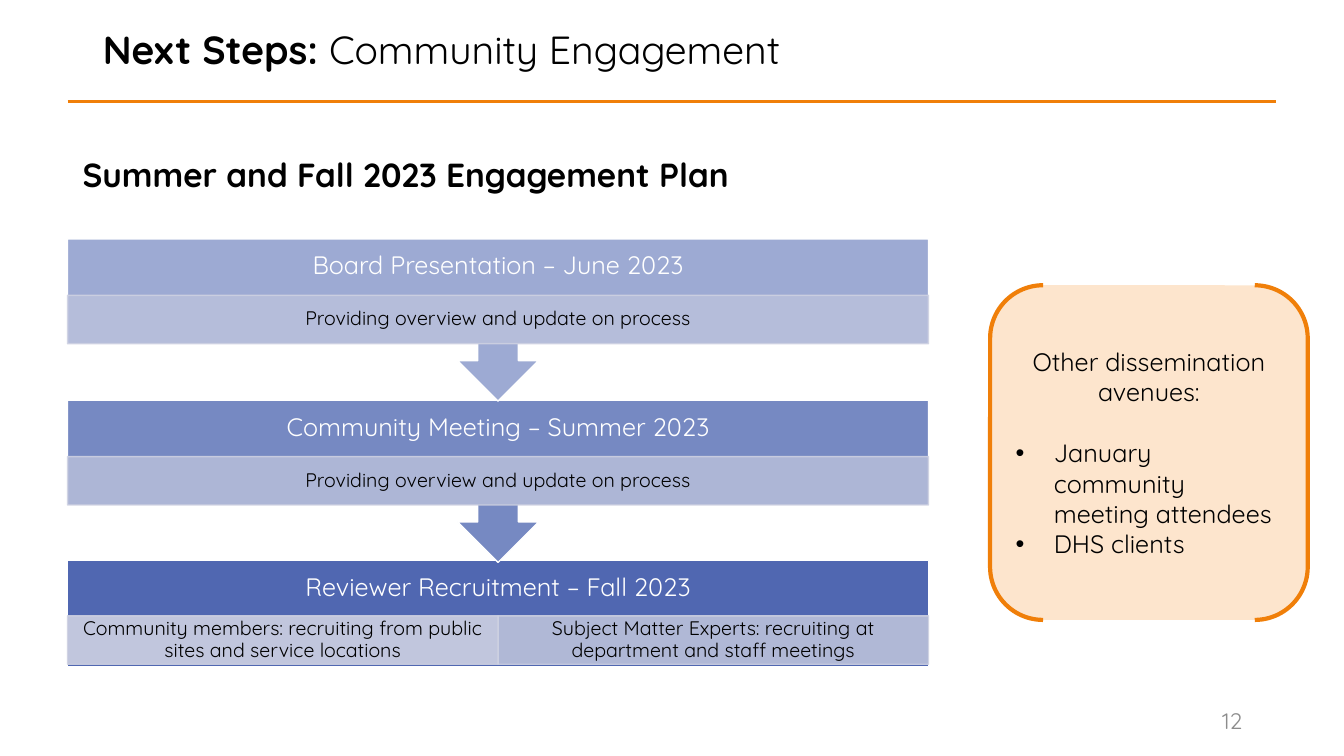
from dataclasses import dataclass

from lxml import etree
from pptx import Presentation
from pptx.dml.color import RGBColor
from pptx.enum.shapes import MSO_CONNECTOR, MSO_SHAPE
from pptx.enum.text import MSO_ANCHOR, PP_ALIGN
from pptx.oxml.ns import qn
from pptx.util import Inches, Pt

LEFT, CENTER, RIGHT = PP_ALIGN.LEFT, PP_ALIGN.CENTER, PP_ALIGN.RIGHT
TOP, MIDDLE = MSO_ANCHOR.TOP, MSO_ANCHOR.MIDDLE
RECTANGLE, CALLOUT = MSO_SHAPE.RECTANGLE, MSO_SHAPE.DOWN_ARROW_CALLOUT
BRACKETS, STRAIGHT = MSO_SHAPE.DOUBLE_BRACKET, MSO_CONNECTOR.STRAIGHT


@dataclass(frozen=True)
class Theme:
    font: str = "Quicksand"
    black: str = "000000"
    white: str = "FFFFFF"
    gray: str = "8C8C8C"
    orange: str = "F07F09"
    peach: str = "FDE5CD"
    blue: str = "3D57A9"
    pale_blue: str = "CED1E2"
    title_size: float = 28
    heading_size: float = 23.8
    body_size: float = 18
    number_size: float = 16
    detail_size: float = 14


theme = Theme()


def add_text(paragraph, text, size=theme.body_size, color=theme.black,
             bold=False, align=LEFT, spacing=1.0):
    paragraph.alignment = align
    paragraph.line_spacing = spacing
    run = paragraph.add_run()
    run.text = text
    run.font.name = theme.font
    run.font.size = Pt(size)
    run.font.bold = bold
    run.font.color.rgb = RGBColor.from_string(color)


def add_block(kind, left, top, width, height, fill, line, line_width=1,
              fill_alpha=100, line_alpha=100, anchor=MIDDLE, margins=(0.1, 0.05)):
    shape = slide.shapes.add_shape(
        kind, Inches(left), Inches(top), Inches(width), Inches(height))
    shape.shadow.inherit = False
    shape.fill.solid()
    shape.fill.fore_color.rgb = RGBColor.from_string(fill)
    shape.line.color.rgb = RGBColor.from_string(line)
    shape.line.width = Pt(line_width)
    # Transparency of the fill and the outline
    properties = shape._element.spPr
    for holder, alpha in ((properties, fill_alpha),
                          (properties.find(qn("a:ln")), line_alpha)):
        color = holder.find(qn("a:solidFill"))[0]
        etree.SubElement(color, qn("a:alpha"), val=str(alpha * 1000))
    frame = shape.text_frame
    frame.word_wrap = True
    frame.vertical_anchor = anchor
    frame.margin_left = frame.margin_right = Inches(margins[0])
    frame.margin_top = frame.margin_bottom = Inches(margins[1])
    return shape


presentation = Presentation()
presentation.slide_width = Inches(13.33)
presentation.slide_height = Inches(7.5)
slide = presentation.slides.add_slide(presentation.slide_layouts[5])

# Title
title = slide.shapes.title
title.left, title.top = Inches(0.92), Inches(0.25)
title.width, title.height = Inches(11.5), Inches(0.92)
title.text_frame.vertical_anchor = TOP
for text, bold in (("Next Steps: ", True), ("Community Engagement", False)):
    add_text(title.text_frame.paragraphs[0], text, size=theme.title_size,
             bold=bold, spacing=0.9)

# Rule under the title
rule = slide.shapes.add_connector(
    STRAIGHT, Inches(0.67), Inches(1.01), Inches(12.66), Inches(1.01))
rule.line.color.rgb = RGBColor.from_string(theme.orange)
rule.line.width = Pt(2.25)
etree.SubElement(rule._element.spPr, qn("a:effectLst"))

# Heading and slide number
labels = (
    ("Summer and Fall 2023 Engagement Plan", (0.72, 1.53, 11.99, 0.92), TOP,
     dict(size=theme.heading_size, bold=True, spacing=0.9)),
    ("12", (9.42, 6.95, 3, 0.4), MIDDLE,
     dict(size=theme.number_size, color=theme.gray, align=RIGHT)),
)
for text, box, anchor, text_format in labels:
    label = slide.shapes.add_textbox(*(Inches(length) for length in box))
    label.text_frame.word_wrap = True
    label.text_frame.vertical_anchor = anchor
    add_text(label.text_frame.paragraphs[0], text, **text_format)

# Engagement steps, last one first so that each arrow lies over the next step
STEP_LEFT, STEP_WIDTH = 0.67, 8.54
DETAIL_HEIGHT = 0.48
overview = "Providing overview and update on process"
steps = (
    ("Reviewer Recruitment – Fall 2023", RECTANGLE, 5.56, 1.05, 90, 0.55, (
        ("Community members: recruiting from public sites and service locations", 90),
        ("Subject Matter Experts: recruiting at department and staff meetings", 77))),
    ("Community Meeting – Summer 2023", CALLOUT, 3.97, 1.61, 70, 0.56, ((overview, 63),)),
    ("Board Presentation – June 2023", CALLOUT, 2.37, 1.61, 50, 0.56, ((overview, 50),)),
)
for heading, kind, top, height, alpha, detail_offset, details in steps:
    step = add_block(kind, STEP_LEFT, top, STEP_WIDTH, height, theme.blue, theme.white,
                     fill_alpha=alpha, anchor=TOP, margins=(0.14, 0.14))
    add_text(step.text_frame.paragraphs[0], heading, color=theme.white,
             align=CENTER, spacing=0.9)
    detail_width = STEP_WIDTH / len(details)
    for column, (text, detail_alpha) in enumerate(details):
        detail = add_block(
            RECTANGLE, STEP_LEFT + column * detail_width, top + detail_offset,
            detail_width, DETAIL_HEIGHT, theme.pale_blue, theme.pale_blue,
            fill_alpha=detail_alpha, line_alpha=90, margins=(0.11, 0.02))
        add_text(detail.text_frame.paragraphs[0], text, size=theme.detail_size,
                 align=CENTER, spacing=0.9)

# Other avenues in brackets
avenues = add_block(BRACKETS, 9.82, 2.83, 3.15, 3.32, theme.peach, theme.orange,
                    line_width=3)
add_text(avenues.text_frame.paragraphs[0], "Other dissemination avenues:", align=CENTER)
for index, text in enumerate(("January community meeting attendees", "DHS clients")):
    paragraph = avenues.text_frame.add_paragraph()
    add_text(paragraph, text)
    if index == 0:
        paragraph.space_before = Pt(22)
    properties = paragraph._p.get_or_add_pPr()
    properties.set("marL", str(Inches(0.38)))
    properties.set("indent", str(Inches(-0.38)))
    etree.SubElement(properties, qn("a:buFont"), typeface="Arial")
    etree.SubElement(properties, qn("a:buChar"), char="•")

presentation.save("out.pptx")
